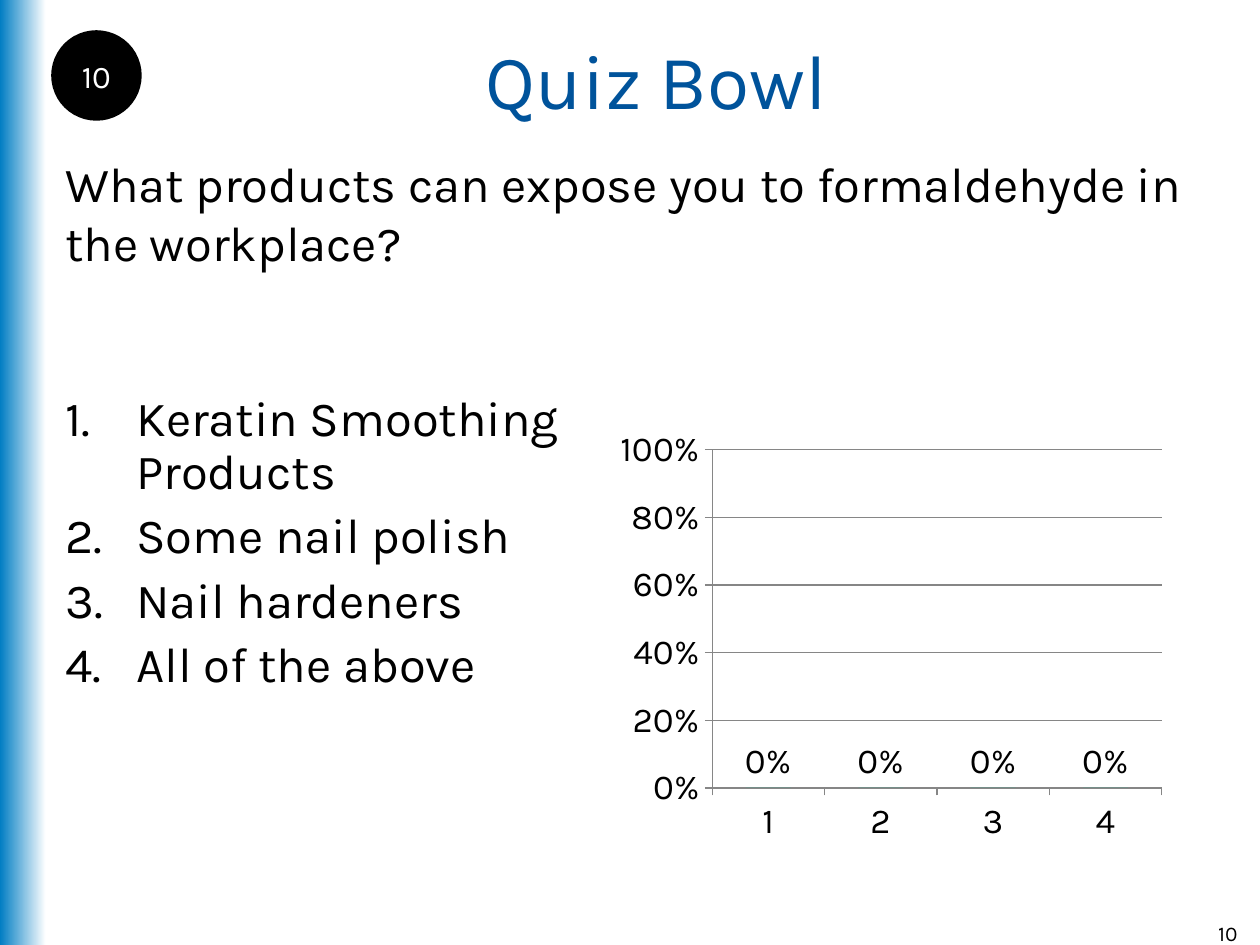
from lxml import etree
from pptx import Presentation
from pptx.chart.data import CategoryChartData
from pptx.dml.color import RGBColor
from pptx.enum.chart import XL_CHART_TYPE, XL_LABEL_POSITION, XL_TICK_MARK
from pptx.enum.shapes import MSO_SHAPE
from pptx.enum.text import MSO_ANCHOR, PP_ALIGN
from pptx.oxml.ns import qn
from pptx.util import Pt

COLUMNS = XL_CHART_TYPE.COLUMN_CLUSTERED
ABOVE_BAR = XL_LABEL_POSITION.OUTSIDE_END
TICK_OUT, TICK_NONE = XL_TICK_MARK.OUTSIDE, XL_TICK_MARK.NONE
RECTANGLE, OVAL = MSO_SHAPE.RECTANGLE, MSO_SHAPE.OVAL
TOP, MIDDLE = MSO_ANCHOR.TOP, MSO_ANCHOR.MIDDLE
LEFT, CENTER, RIGHT = PP_ALIGN.LEFT, PP_ALIGN.CENTER, PP_ALIGN.RIGHT

EMU_PER_PX = 914400 / 126
FONT = "Karla"
BLACK, WHITE = "000000", "FFFFFF"
TITLE_BLUE, BAND_BLUE = "00539B", "007DC3"
BAR_GREEN, AXIS_GRAY = "00CC99", "868686"

ANSWERS = [
    "Keratin Smoothing Products",
    "Some nail polish",
    "Nail hardeners",
    "All of the above",
]


def px(length):
    return round(length * EMU_PER_PX)


def box(*lengths):
    return [px(length) for length in lengths]


def color(hex_value):
    return RGBColor.from_string(hex_value)


def style_font(font, size, hex_value):
    font.name = FONT
    font.size = Pt(size)
    font.color.rgb = color(hex_value)


def add_run(paragraph, words, size, hex_value):
    run = paragraph.add_run()
    run.text = words
    style_font(run.font, size, hex_value)


def add_line_of_text(slide, place, words, size, hex_value=BLACK,
                     align=LEFT, anchor=TOP):
    frame = slide.shapes.add_textbox(*box(*place)).text_frame
    frame.word_wrap = True
    frame.vertical_anchor = anchor
    paragraph = frame.paragraphs[0]
    paragraph.alignment = align
    add_run(paragraph, words, size, hex_value)


def number_paragraph(paragraph, indent):
    """Give the paragraph an automatic number with a hanging indent."""
    properties = paragraph._p.get_or_add_pPr()
    properties.set("marL", str(px(indent)))
    properties.set("indent", str(-px(indent)))
    etree.SubElement(properties, qn("a:buFont"), typeface=FONT)
    etree.SubElement(properties, qn("a:buAutoNum"), type="arabicPeriod")


def add_numbered_list(slide, place, items, size):
    frame = slide.shapes.add_textbox(*box(*place)).text_frame
    frame.word_wrap = True
    for index, item in enumerate(items):
        paragraph = frame.add_paragraph() if index else frame.paragraphs[0]
        number_paragraph(paragraph, 71)
        paragraph.line_spacing = 0.9
        if index:
            paragraph.space_before = Pt(6.5)
        add_run(paragraph, item, size, BLACK)


def add_side_band(slide, place):
    band = slide.shapes.add_shape(RECTANGLE, *box(*place))
    band.shadow.inherit = False
    band.line.fill.background()
    band.fill.gradient()
    band.fill.gradient_angle = 0
    for stop, hex_value in zip(band.fill.gradient_stops, (BAND_BLUE, WHITE)):
        stop.color.rgb = color(hex_value)


def add_countdown(slide, place, seconds):
    disc = slide.shapes.add_shape(OVAL, *box(*place))
    disc.shadow.inherit = False
    disc.fill.solid()
    disc.fill.fore_color.rgb = color(BLACK)
    disc.line.color.rgb = color(BLACK)
    disc.line.width = Pt(2)
    frame = disc.text_frame
    frame.margin_left = frame.margin_right = 0
    frame.margin_top = frame.margin_bottom = 0
    frame.word_wrap = False
    frame.vertical_anchor = MIDDLE
    frame.paragraphs[0].alignment = CENTER
    add_run(frame.paragraphs[0], seconds, 18, WHITE)


def style_line(line):
    line.color.rgb = color(AXIS_GRAY)
    line.width = Pt(0.75)


def add_vote_chart(slide, place, votes):
    data = CategoryChartData(number_format="0%")
    data.categories = [str(number + 1) for number in range(len(votes))]
    data.add_series("Series 1", votes)
    chart = slide.shapes.add_chart(COLUMNS, *box(*place), data).chart
    chart.has_legend = False
    chart.has_title = False
    style_font(chart.font, 20, BLACK)

    for axis in (chart.category_axis, chart.value_axis):
        axis.major_tick_mark = TICK_OUT
        axis.minor_tick_mark = TICK_NONE
        style_line(axis.format.line)
    share_axis = chart.value_axis
    share_axis.minimum_scale = 0
    share_axis.maximum_scale = 1
    share_axis.major_unit = 0.2
    share_axis.has_major_gridlines = True
    style_line(share_axis.major_gridlines.format.line)
    share_axis.tick_labels.number_format = "0%"
    share_axis.tick_labels.number_format_is_linked = False

    plot = chart.plots[0]
    plot.gap_width = 150
    plot.vary_by_categories = False
    bars = plot.series[0].format.fill
    bars.solid()
    bars.fore_color.rgb = color(BAR_GREEN)
    plot.has_data_labels = True
    labels = plot.data_labels
    labels.show_value = True
    labels.number_format = "0%"
    labels.number_format_is_linked = False
    labels.position = ABOVE_BAR
    style_font(labels.font, 20, BLACK)


def main():
    deck = Presentation()
    deck.slide_width, deck.slide_height = box(1260, 945)
    slide = deck.slides.add_slide(deck.slide_layouts[6])

    add_side_band(slide, (0, 0, 46, 945))
    add_line_of_text(slide, (53, 0, 1207, 158), "Quiz Bowl", 44, TITLE_BLUE,
                     CENTER, MIDDLE)
    add_line_of_text(slide, (1187, 914, 63, 31), "10", 12, align=RIGHT)
    add_line_of_text(
        slide, (53, 147, 1172, 181),
        "What products can expose you to formaldehyde in the workplace?", 28)
    add_numbered_list(slide, (53, 388, 564, 525), ANSWERS, 28)
    add_vote_chart(slide, (609, 420, 564, 431), [0] * len(ANSWERS))
    add_countdown(slide, (53, 32, 87, 87), "10")

    deck.save("out.pptx")


if __name__ == "__main__":
    main()
